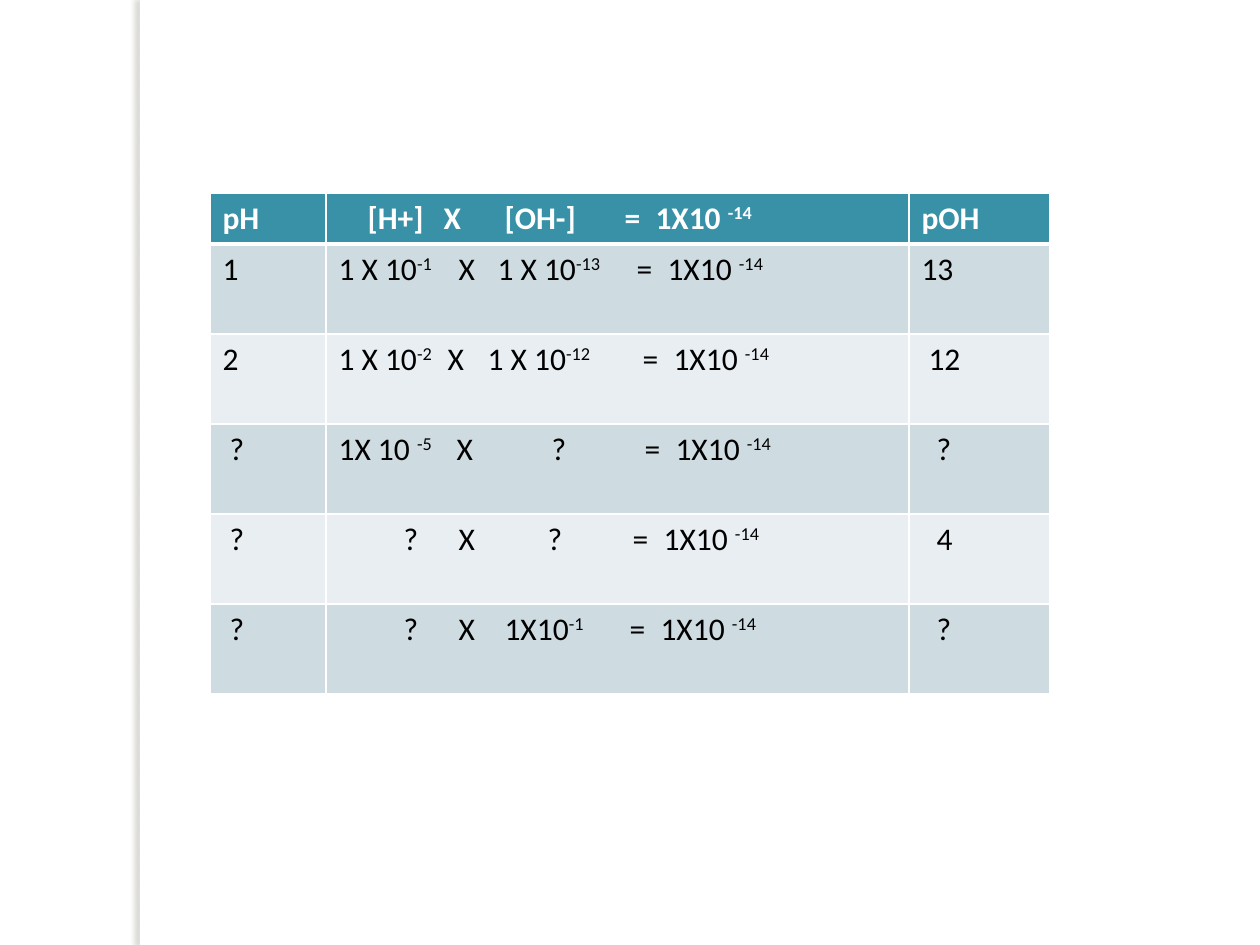
from lxml import etree
from pptx import Presentation
from pptx.dml.color import RGBColor
from pptx.enum.shapes import MSO_SHAPE
from pptx.oxml.ns import qn
from pptx.util import Pt

RECT = MSO_SHAPE.RECTANGLE
WHITE = RGBColor(0xFF, 0xFF, 0xFF)
BLACK = RGBColor(0x00, 0x00, 0x00)
TEAL = RGBColor(0x38, 0x91, 0xA7)
BAND_DARK = RGBColor(0xCE, 0xDC, 0xE1)
BAND_LIGHT = RGBColor(0xE8, 0xEE, 0xF1)
SHADOW = RGBColor(0x73, 0x6F, 0x63)
EMU_PER_PX = 914400 // 126
PRODUCT_GAP = 31  # from "=" to the ion product


def px(n):
    return round(n * 914400 / 126)


def add(parent, tag, **attrs):
    return etree.SubElement(parent, qn(tag), {k: str(v) for k, v in attrs.items()})


class SlideBuilder:
    font, size = "Calibri", Pt(18)

    def __init__(self, slide):
        self.slide = slide

    def bar(self, x, y, w, h):
        """White strip that casts a soft shadow to the left."""
        sp = self.slide.shapes.add_shape(RECT, px(x), px(y), px(w), px(h))
        sp.fill.solid()
        sp.fill.fore_color.rgb = WHITE
        sp.line.fill.background()
        sp.shadow.inherit = False
        effects = sp._element.spPr.find(qn("a:effectLst"))
        shadow = add(effects, "a:outerShdw", blurRad=Pt(3), dist=Pt(3),
                     dir=180 * 60000, algn="tl", rotWithShape=0)
        color = add(shadow, "a:srgbClr", val=SHADOW)
        add(color, "a:alpha", val=25000)

    def table(self, x, y, widths, heights, rows):
        tbl = self.slide.shapes.add_table(
            len(rows), len(widths), px(x), px(y),
            px(sum(widths)), px(sum(heights))).table
        for col, w in zip(tbl.columns, widths):
            col.width = px(w)
        for row, h in zip(tbl.rows, heights):
            row.height = px(h)
        for i, row in enumerate(rows):
            fill = TEAL if i == 0 else BAND_DARK if i % 2 else BAND_LIGHT
            for j, parts in enumerate(row):
                self.cell(tbl.cell(i, j), parts, fill, header=i == 0)

    def cell(self, cell, parts, fill, header):
        self.borders(cell, bottom=3 if header else 1)
        cell.fill.solid()
        cell.fill.fore_color.rgb = fill
        p = cell.text_frame.paragraphs[0]
        p.font.name, p.font.size, p.font.bold = self.font, self.size, header
        p.font.color.rgb = WHITE if header else BLACK
        self.tabbed(p, parts)

    def borders(self, cell, bottom):
        tcPr = cell._tc.get_or_add_tcPr()
        for side, width in zip("LRTB", (1, 1, 1, bottom)):
            ln = add(tcPr, f"a:ln{side}", w=Pt(width))
            add(add(ln, "a:solidFill"), "a:srgbClr", val=WHITE)

    def tabbed(self, p, parts):
        """Place (offset, text) parts at tab stops; ^ starts a superscript."""
        stops = [offset for offset, _ in parts if offset]
        if stops:
            pPr = p._p.get_or_add_pPr()
            tabs = add(pPr, "a:tabLst")
            pPr.insert(0, tabs)
            for stop in stops:
                add(tabs, "a:tab", pos=px(stop), algn="l")
        for offset, text in parts:
            base, _, power = text.partition("^")
            p.add_run().text = ("\t" if offset else "") + base
            if power:
                r = p.add_run()
                r.text = power
                r._r.get_or_add_rPr().set("baseline", "30000")


def equation(h, h_at, x_at, oh, oh_at, eq_at):
    return [(h_at, h), (x_at, "X"), (oh_at, oh), (eq_at, "="),
            (eq_at + PRODUCT_GAP, "1X10 ^-14")]


def main():
    prs = Presentation()
    prs.slide_width, prs.slide_height = px(1260), px(945)
    s = SlideBuilder(prs.slides.add_slide(prs.slide_layouts[6]))

    # Side strip
    s.bar(140, 0, 10, 945)

    # pH, ion concentrations and pOH
    rows = [
        [[(0, "pH")], equation("[H+]", 29, 105, "[OH-]", 166, 286), [(0, "pOH")]],
        [[(0, "1")], equation("1 X 10^-1", 0, 120, "1 X 10^-13", 159, 298), [(0, "13")]],
        [[(0, "2")], equation("1 X 10^-2", 0, 109, "1 X 10^-12", 149, 304), [(7, "12")]],
        [[(7, "?")], equation("1X 10 ^-5", 0, 118, "?", 213, 306), [(15, "?")]],
        [[(7, "?")], equation("?", 65, 120, "?", 209, 294), [(15, "4")]],
        [[(7, "?")], equation("?", 65, 120, "1X10^-1", 166, 291), [(15, "?")]],
    ]
    s.table(210, 193, [116, 583, 141], [50] + [90] * 5, rows)

    prs.save("out.pptx")


if __name__ == "__main__":
    main()
